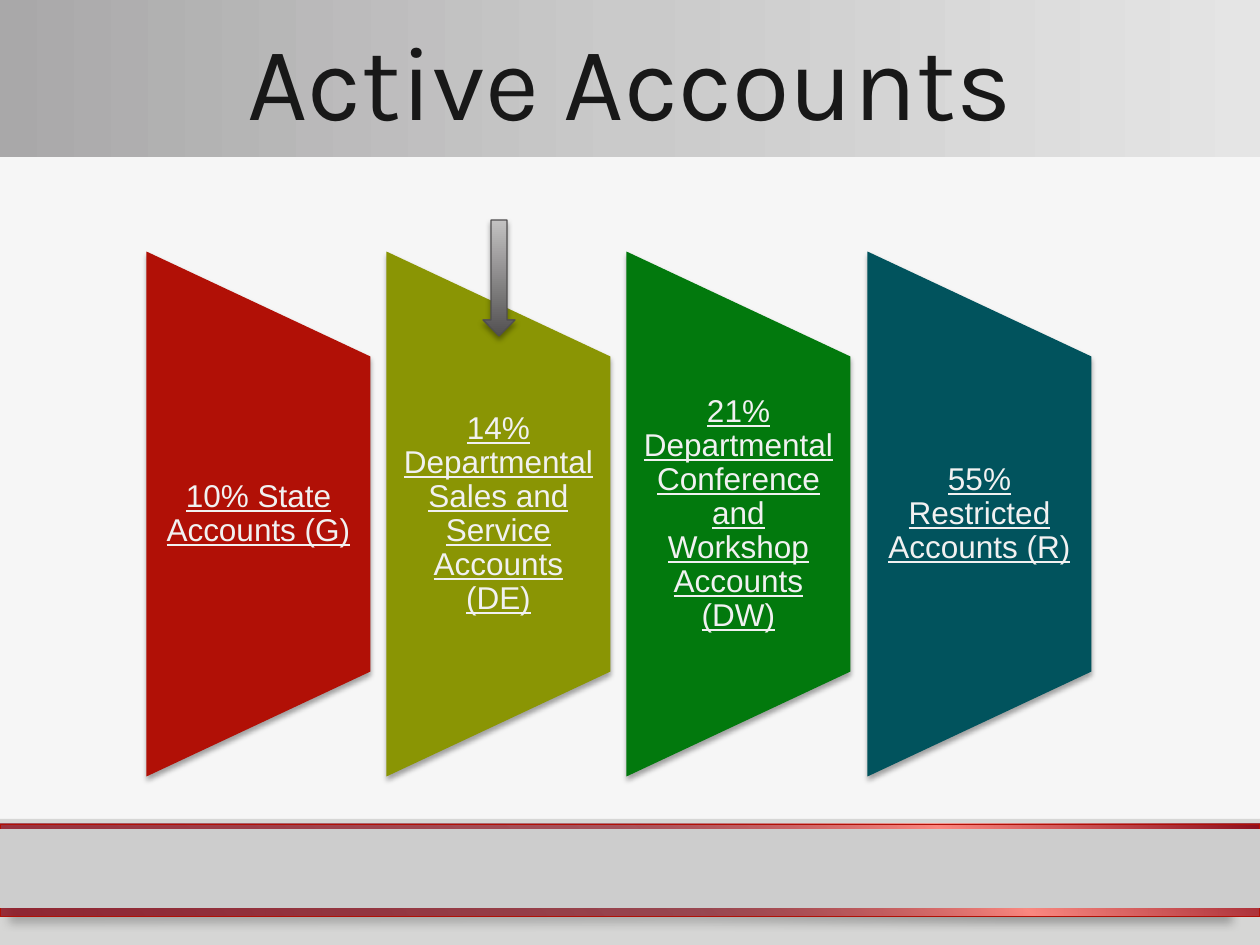
"""Build the Active Accounts slide with four account panels."""
from dataclasses import dataclass
from typing import Optional

from lxml.etree import SubElement
from pptx import Presentation
from pptx.dml.color import RGBColor
from pptx.enum.shapes import MSO_SHAPE as Preset
from pptx.enum.text import MSO_ANCHOR as Anchor, PP_ALIGN as Align
from pptx.oxml.ns import qn
from pptx.util import Pt

EMU_PER_PX = 914400 / 126


@dataclass(frozen=True)
class Stop:
    position: int
    color: str
    alpha: int = 100


@dataclass(frozen=True)
class Gradient:
    angle: int
    stops: tuple[Stop, ...]


@dataclass(frozen=True)
class Shadow:
    alpha: int
    blur: float
    distance: float
    direction: int
    scale: int = 100


@dataclass(frozen=True)
class Box:
    left: int
    top: int
    width: int
    height: int


@dataclass(frozen=True)
class Style:
    fill: str | Gradient
    line: Optional[str] = None
    line_width: float = 0.75
    shadow: Optional[Shadow] = None


@dataclass(frozen=True)
class TextFormat:
    name: str
    size: float
    color: str
    underline: bool = False


@dataclass(frozen=True)
class Panel:
    label: str
    color: str


@dataclass(frozen=True)
class Theme:
    background: str = "F6F6F6"
    footer: str = "D6D6D5"
    footer_inner: str = "CDCDCD"
    red_line: str = "B11006"
    arrow_line: str = "504E4F"
    title: TextFormat = TextFormat("Karla", 60, "181818")
    label: TextFormat = TextFormat("Arial", 18, "F1F1F1", True)
    header: Gradient = Gradient(0, (Stop(0, "A9A8A9"), Stop(50, "CACACA"), Stop(100, "E5E5E5")))
    ribbon: Gradient = Gradient(312, (Stop(0, "8C0E1D", 84), Stop(52, "8C0E1D", 64),
                                      Stop(76, "FB8880"), Stop(100, "8C0E1D")))
    arrow: Gradient = Gradient(270, (Stop(0, "525051"), Stop(100, "C3C2C2")))
    soft_shadow: Shadow = Shadow(35, 3.1, 1.8, 90)
    ribbon_shadow: Shadow = Shadow(28, 5.2, 7, 45, 97)


THEME = Theme()
PANELS = (
    Panel("10% State Accounts (G)", "B11006"),
    Panel("14% Departmental Sales and Service Accounts (DE)", "8A9504"),
    Panel("21% Departmental Conference and Workshop Accounts (DW)", "02790D"),
    Panel("55% Restricted Accounts (R)", "01535D"),
)


def px(value: float) -> int:
    return round(value * EMU_PER_PX)


def place(box: Box) -> tuple[int, ...]:
    return tuple(px(value) for value in (box.left, box.top, box.width, box.height))


def add_color(parent, color: str, alpha: int) -> None:
    element = SubElement(parent, qn("a:srgbClr"), val=color)
    if alpha < 100:
        SubElement(element, qn("a:alpha"), val=str(alpha * 1000))


def apply_gradient(shape, gradient: Gradient) -> None:
    shape.fill.gradient()
    element = shape._element.spPr.find(qn("a:gradFill"))
    for child in list(element):
        element.remove(child)
    stop_list = SubElement(element, qn("a:gsLst"))
    for stop in gradient.stops:
        add_color(SubElement(stop_list, qn("a:gs"), pos=str(stop.position * 1000)),
                  stop.color, stop.alpha)
    SubElement(element, qn("a:lin"), ang=str(gradient.angle * 60000), scaled="0")


def apply_shadow(shape, shadow: Shadow) -> None:
    effects = shape._element.spPr.find(qn("a:effectLst"))
    scale = str(shadow.scale * 1000)
    outer = SubElement(effects, qn("a:outerShdw"), blurRad=str(Pt(shadow.blur)),
                       dist=str(Pt(shadow.distance)), dir=str(shadow.direction * 60000),
                       sx=scale, sy=scale, algn="tl", rotWithShape="0")
    add_color(outer, "000000", shadow.alpha)


def add_shape(slide, preset: Preset, box: Box, style: Style, rotation: int = 0):
    shape = slide.shapes.add_shape(preset, *place(box))
    shape.rotation = rotation
    shape.shadow.inherit = False
    if isinstance(style.fill, Gradient):
        apply_gradient(shape, style.fill)
    else:
        shape.fill.solid()
        shape.fill.fore_color.rgb = RGBColor.from_string(style.fill)
    if style.line:
        shape.line.color.rgb = RGBColor.from_string(style.line)
        shape.line.width = Pt(style.line_width)
    else:
        shape.line.fill.background()
    if style.shadow:
        apply_shadow(shape, style.shadow)
    return shape


def write_text(shape, text: str, text_format: TextFormat, spacing: float = 1.0) -> None:
    frame = shape.text_frame
    frame_values = {"word_wrap": True, "vertical_anchor": Anchor.MIDDLE, "margin_left": px(15),
                    "margin_right": px(16), "margin_top": 0, "margin_bottom": 0}
    paragraph = frame.paragraphs[0]
    run = paragraph.add_run()
    run.text = text
    font_values = {"name": text_format.name, "size": Pt(text_format.size),
                   "underline": text_format.underline}
    paragraph_values = {"alignment": Align.CENTER, "line_spacing": spacing}
    for target, values in ((frame, frame_values), (paragraph, paragraph_values),
                           (run.font, font_values)):
        for name, value in values.items():
            setattr(target, name, value)
    run.font.color.rgb = RGBColor.from_string(text_format.color)


def add_panel(slide, panel: Panel, left: int) -> None:
    width, height, top = 224, 525, 252
    turned = Box(left + (width - height) // 2, top + (height - width) // 2, height, width)
    add_shape(slide, Preset.FLOWCHART_MANUAL_OPERATION, turned,
              Style(panel.color, shadow=THEME.soft_shadow), 270)
    label = slide.shapes.add_textbox(*place(Box(left, top + height // 5, width, height * 3 // 5)))
    write_text(label, panel.label, THEME.label, 0.9)


def main() -> None:
    presentation = Presentation()
    presentation.slide_width, presentation.slide_height = px(1260), px(945)
    slide = presentation.slides.add_slide(presentation.slide_layouts[6])
    slide.background.fill.solid()
    slide.background.fill.fore_color.rgb = RGBColor.from_string(THEME.background)

    add_shape(slide, Preset.RECTANGLE, Box(0, 819, 1260, 126), Style(THEME.footer))
    add_shape(slide, Preset.RECTANGLE, Box(0, 824, 1260, 92),
              Style(THEME.ribbon, THEME.red_line, 0.5, THEME.ribbon_shadow))
    add_shape(slide, Preset.RECTANGLE, Box(0, 829, 1260, 79), Style(THEME.footer_inner))
    header = add_shape(slide, Preset.RECTANGLE, Box(0, 0, 1260, 157), Style(THEME.header))
    write_text(header, "Active Accounts", THEME.title)

    for index, panel in enumerate(PANELS):
        add_panel(slide, panel, 147 + index * 721 // 3)
    add_shape(slide, Preset.DOWN_ARROW, Box(483, 220, 32, 116),
              Style(THEME.arrow, THEME.arrow_line, shadow=THEME.soft_shadow))
    presentation.save("out.pptx")


if __name__ == "__main__":
    main()
